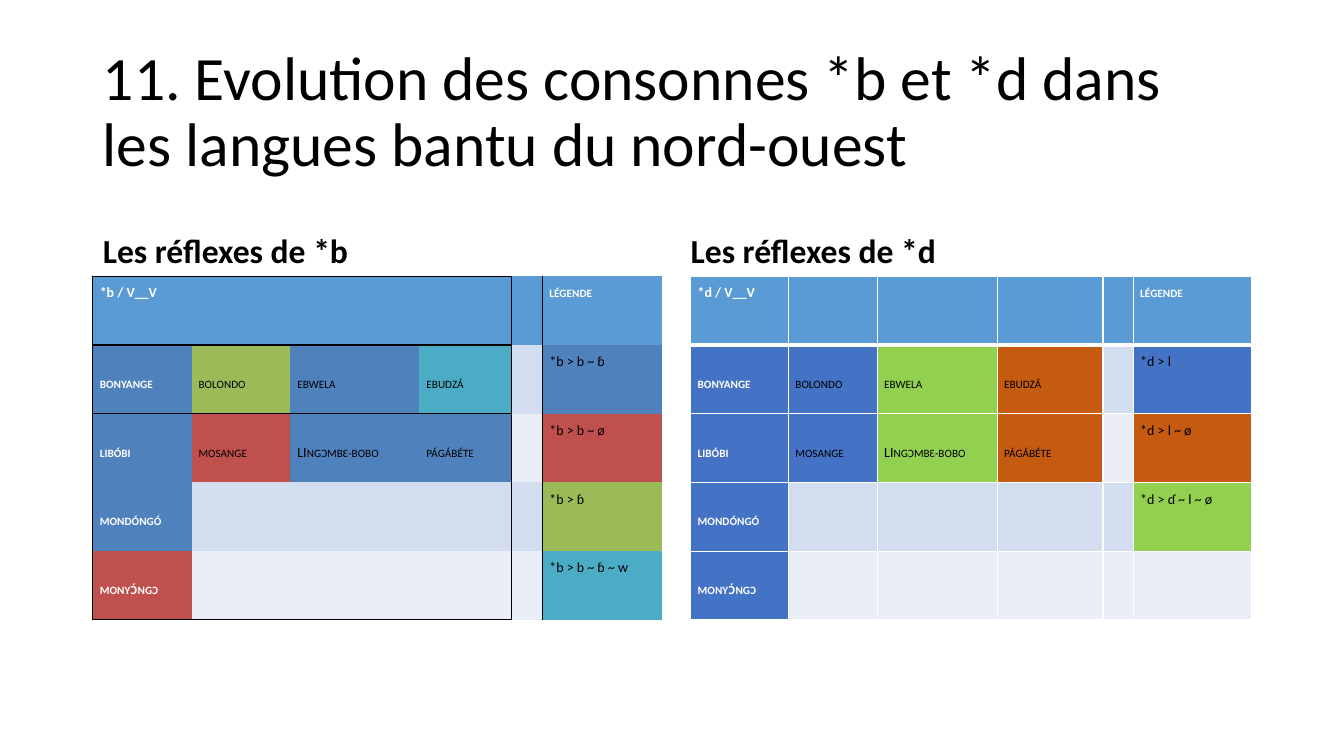
import pptx
import pptx.util
import pptx.dml.color
import pptx.enum.text
import pptx.oxml.ns
import lxml.etree

Inches, Pt = pptx.util.Inches, pptx.util.Pt
RGBColor = pptx.dml.color.RGBColor
MSO_ANCHOR = pptx.enum.text.MSO_ANCHOR
PP_ALIGN = pptx.enum.text.PP_ALIGN
qn = pptx.oxml.ns.qn

BLACK = RGBColor(0x00, 0x00, 0x00)
WHITE = RGBColor(0xFF, 0xFF, 0xFF)
HEADER = RGBColor(0x5B, 0x9B, 0xD5)
BAND_DARK = RGBColor(0xD2, 0xDE, 0xEF)
BAND_LIGHT = RGBColor(0xEA, 0xEF, 0xF7)
STEEL = RGBColor(0x4F, 0x81, 0xBD)
RED = RGBColor(0xC0, 0x50, 0x4D)
OLIVE = RGBColor(0x9B, 0xBB, 0x59)
TEAL = RGBColor(0x4B, 0xAC, 0xC6)
BLUE = RGBColor(0x44, 0x72, 0xC4)
GREEN = RGBColor(0x92, 0xD0, 0x50)
ORANGE = RGBColor(0xC5, 0x5A, 0x11)
NO_STYLE = "{2D5ABB26-0587-4C30-8999-92F81FD0307C}"

LANGUAGES = [
    ["bonyange", "bolondo", "ebwela", "ebudzá"],
    ["libóbi", "mosange", "LIngɔmbɛ-bobo", "págábéte"],
    ["mondóngó", "", "", ""],
    ["monyɔ́ngɔ", "", "", ""],
]
TABLES = [
    dict(consonant="*b", left=0.92, widths=[0.98, 0.98, 1.28, 0.91, 0.31, 1.19],
         legend=["*b > b ~ ɓ", "*b > b ~ ø", "*b > ɓ", "*b > b ~ ɓ ~ w"],
         fills=[[STEEL, OLIVE, STEEL, TEAL, None, STEEL],
                [STEEL, RED, STEEL, STEEL, None, RED],
                [STEEL, None, None, None, None, OLIVE],
                [RED, None, None, None, None, TEAL]]),
    dict(consonant="*d", left=6.85, widths=[0.97, 0.88, 1.19, 1.05, 0.3, 1.17],
         legend=["*d > l", "*d > l ~ ø", "*d > ɗ ~ l ~ ø", ""],
         fills=[[BLUE, BLUE, GREEN, ORANGE, None, BLUE],
                [BLUE, BLUE, GREEN, ORANGE, None, ORANGE],
                [BLUE, None, None, None, None, GREEN],
                [BLUE, None, None, None, None, None]]),
]


def write(tf, text, size, color, bold, **paragraph):
    p = tf.paragraphs[0]
    for name, value in paragraph.items():
        setattr(p, name, value)
    r = p.add_run()
    r.text = text
    r.font.color.rgb = color
    for name, value in dict(name="Calibri", size=Pt(size), bold=bold).items():
        setattr(r.font, name, value)
    return r


def set_borders(cell, borders):
    tcPr = cell._tc.get_or_add_tcPr()
    for i, side in enumerate(s for s in "LRTB" if s in borders):
        color, width = borders[side]
        ln = lxml.etree.Element(qn("a:ln" + side), w=str(Pt(width)))
        fill = lxml.etree.SubElement(ln, qn("a:solidFill"))
        lxml.etree.SubElement(fill, qn("a:srgbClr"), val=str(color))
        tcPr.insert(i, ln)


prs = pptx.Presentation()
prs.slide_width, prs.slide_height = Inches(13.33), Inches(7.5)
s = prs.slides.add_slide(prs.slide_layouts[4])
holders = {ph.placeholder_format.idx: ph for ph in s.placeholders}
for idx in (2, 4):
    holders[idx]._element.getparent().remove(holders[idx]._element)

for idx, text, box, size, bold, anchor, before in [
    (0, "11. Evolution des consonnes *b et *d dans les langues bantu du nord-ouest",
     (0.92, 0.4, 11.5, 1.45), 44, False, MSO_ANCHOR.MIDDLE, 0),
    (1, "Les réflexes de *b", (0.92, 1.84, 5.64, 0.9), 24, True, MSO_ANCHOR.BOTTOM, 10),
    (3, "Les réflexes de *d", (6.75, 1.84, 5.67, 0.9), 24, True, MSO_ANCHOR.BOTTOM, 10),
]:
    sp = holders[idx]
    sp.left, sp.top, sp.width, sp.height = map(Inches, box)
    tf = sp.text_frame
    for name, value in dict(word_wrap=True, vertical_anchor=anchor,
                            auto_size=pptx.enum.text.MSO_AUTO_SIZE.NONE).items():
        setattr(tf, name, value)
    write(tf, text, size, BLACK, bold, alignment=PP_ALIGN.LEFT,
          line_spacing=0.9, space_before=Pt(before))

for spec_table in TABLES:
    consonant, widths = spec_table["consonant"], spec_table["widths"]
    frame = s.shapes.add_table(5, 6, Inches(spec_table["left"]), Inches(2.74),
                               Inches(sum(widths)), Inches(3.41))
    table = frame.table
    table._tbl.tblPr.find(qn("a:tableStyleId")).text = NO_STYLE
    for column, width in zip(table.columns, widths):
        column.width = Inches(width)

    rows = [[consonant + " / V__V", "", "", "", "", "légende"]]
    rows += [names + ["", key] for names, key in zip(LANGUAGES, spec_table["legend"])]
    fills = [[HEADER] * 6] + spec_table["fills"]
    for i, texts in enumerate(rows):
        table.rows[i].height = Inches(3.41 / 5)
        band = BAND_DARK if i % 2 else BAND_LIGHT
        for j, text in enumerate(texts):
            cell = table.cell(i, j)
            cell.fill.solid()
            cell.fill.fore_color.rgb = fills[i][j] or band
            if text:
                language = i > 0 and j < 4
                strong = i == 0 or j == 0
                for name, value in dict(
                        margin_left=Inches(0.07), margin_right=Inches(0.07),
                        margin_top=0, margin_bottom=0,
                        vertical_anchor=MSO_ANCHOR.MIDDLE if language else MSO_ANCHOR.TOP).items():
                    setattr(cell, name, value)
                r = write(cell.text_frame, text, 10, WHITE if strong else BLACK, strong,
                          line_spacing=1.5, space_after=Pt(10))
                if language or text == "légende":
                    r.font._element.set("cap", "small")

            if consonant == "*d":
                borders = {side: (WHITE, 1) for side in "LRTB"}
                if i < 2:
                    borders["T" if i else "B"] = (WHITE, 3)
            else:
                edges = {"L": j in (0, 4), "R": j == 3,
                         "T": j < 4 and i < 2, "B": j < 4 and i in (0, 4)}
                borders = {side: (BLACK, 1) for side, drawn in edges.items() if drawn}
            set_borders(cell, borders)

prs.save("out.pptx")
